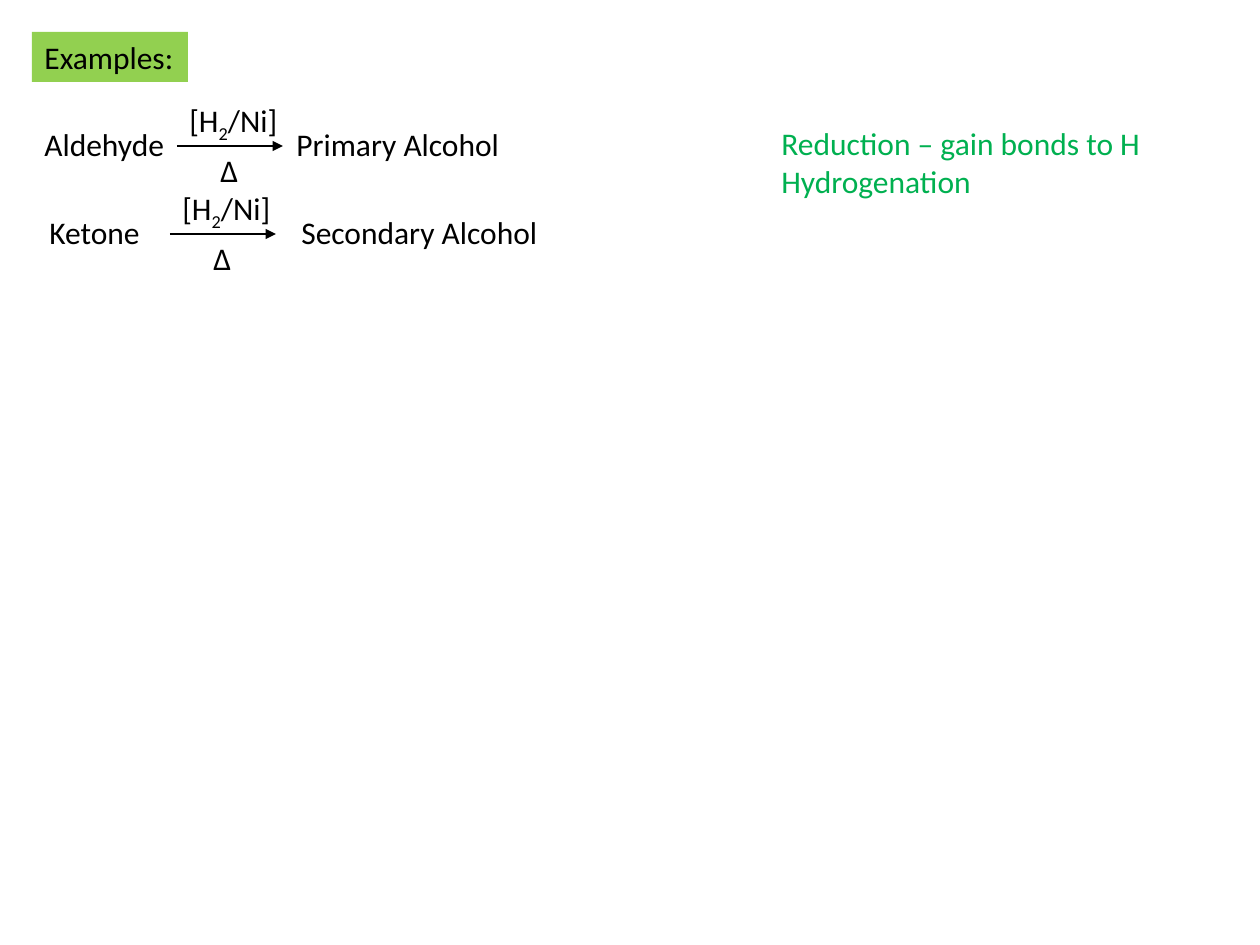
"""Build a slide of carbonyl reduction examples with reaction arrows."""
from lxml import etree
from pptx import Presentation
from pptx.dml.color import RGBColor
from pptx.enum.shapes import MSO_CONNECTOR, MSO_SHAPE
from pptx.enum.text import MSO_AUTO_SIZE, PP_ALIGN
from pptx.oxml.ns import qn
from pptx.util import Inches, Pt

STRAIGHT = MSO_CONNECTOR.STRAIGHT
RECT = MSO_SHAPE.RECTANGLE
GROW = MSO_AUTO_SIZE.SHAPE_TO_FIT_TEXT
LEFT = PP_ALIGN.LEFT
PX = Inches(1) / 126
THEME = {
    "font": "Calibri", "size": Pt(18), "line": Pt(1),
    "ink": RGBColor(0, 0, 0),
    "tag": RGBColor(0x92, 0xD0, 0x50),
    "note": RGBColor(0x00, 0xB0, 0x50),
}


def px(*values):
    return [round(v * PX) for v in values]


def write(s, paragraphs, color=THEME["ink"]):
    tf = s.text_frame
    for name, value in {"word_wrap": False, "auto_size": GROW}.items():
        setattr(tf, name, value)
    for i, runs in enumerate(paragraphs):
        p = tf.add_paragraph() if i else tf.paragraphs[0]
        p.alignment = LEFT
        for text in runs:
            r = p.add_run()
            r.text = text
            for name, value in {"name": THEME["font"], "size": THEME["size"]}.items():
                setattr(r.font, name, value)
            r.font.color.rgb = color
            if text.isdigit():
                r.font._element.set("baseline", "-25000")
    return tf


prs = Presentation()
prs.slide_width, prs.slide_height = px(1260, 945)
slide = prs.slides.add_slide(prs.slide_layouts[6])

s = slide.shapes.add_shape(RECT, *px(32, 32, 156, 50))
s.shadow.inherit = False
s.fill.solid()
s.fill.fore_color.rgb = THEME["tag"]
s.line.fill.background()
write(s, [["Examples:"]])

s = slide.shapes.add_textbox(*px(769, 118, 399, 89))
write(s, [["Reduction – gain bonds to H"], ["Hydrogenation"]], THEME["note"])

reactions = [
    ("Aldehyde", "Primary Alcohol", 32, 485, 177, 146),
    ("Ketone", "Secondary Alcohol", 37, 519, 170, 234),
]
for reactant, product, left, width, x, y in reactions:
    group = slide.shapes.add_group_shape()
    s = group.shapes.add_textbox(*px(left, y - 27, width, 50))
    tf = write(s, [[f"{reactant}\t\t\t{product}"]])
    tabs = etree.SubElement(tf.paragraphs[0]._p.get_or_add_pPr(), qn("a:tabLst"))
    for stop in (126, 189, 252):
        etree.SubElement(tabs, qn("a:tab"), pos=str(px(stop)[0]), algn="l")

    arrow = group.shapes.add_connector(STRAIGHT, *px(x, y, x + 106, y))
    arrow.line.color.rgb = THEME["ink"]
    arrow.line.width = THEME["line"]
    etree.SubElement(arrow.line._get_or_add_ln(), qn("a:tailEnd"), type="triangle")
    etree.SubElement(arrow._element.spPr, qn("a:effectLst"))

    s = group.shapes.add_textbox(*px(x, y - 51, 116, 50))
    write(s, [["[H", "2", "/Ni]"]])
    s = group.shapes.add_textbox(*px(x + 31, y - 1, 43, 50))
    write(s, [["Δ"]])

prs.save("out.pptx")
